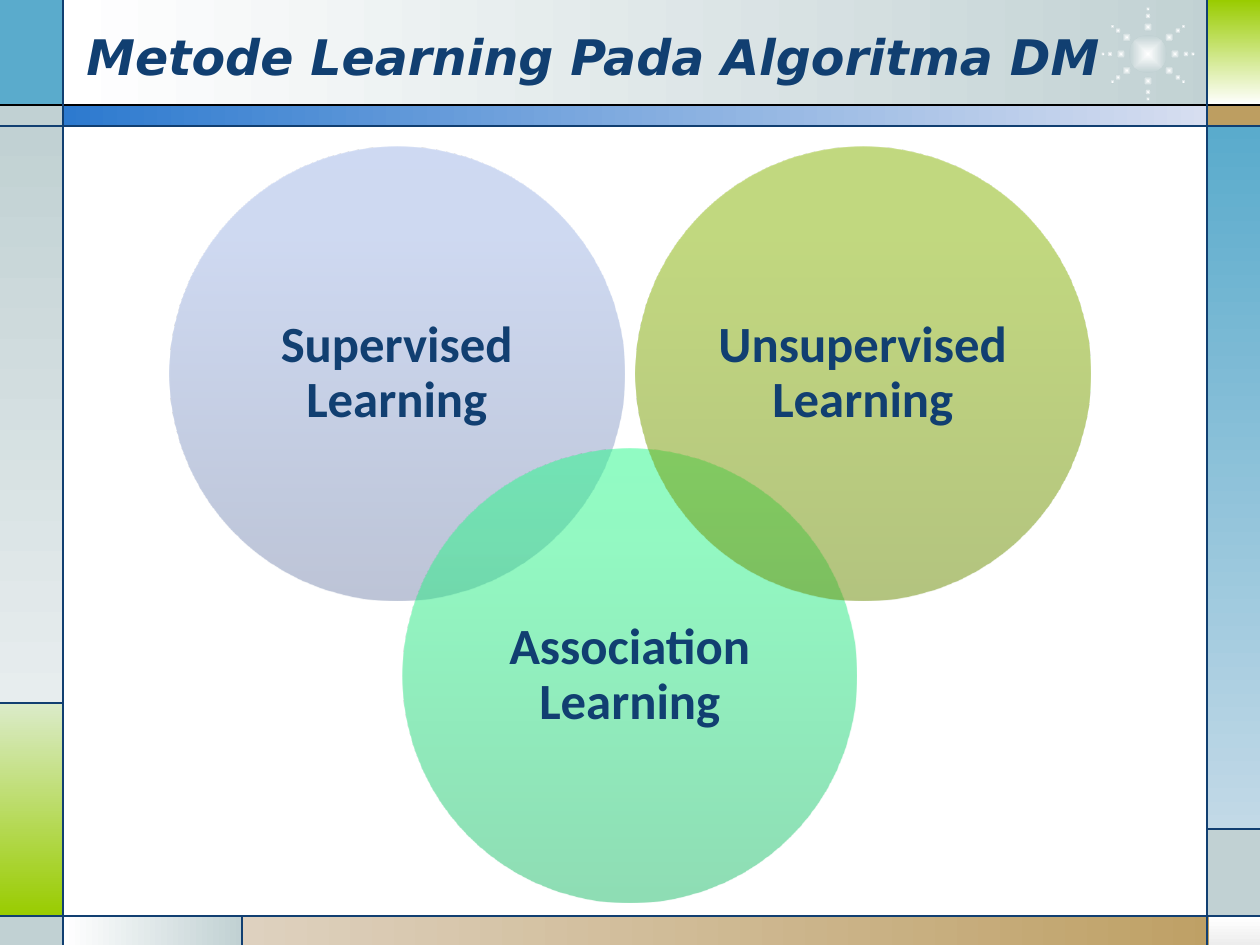
from math import cos, radians, sin

from lxml import etree
from pptx import Presentation
from pptx.dml.color import RGBColor
from pptx.enum.shapes import MSO_CONNECTOR as Connector, MSO_SHAPE as Shape
from pptx.enum.text import MSO_ANCHOR as Anchor, PP_ALIGN as Align
from pptx.oxml.ns import qn
from pptx.util import Pt

EMU_PER_PX = 914400 / 126

WHITE = RGBColor(0xFF, 0xFF, 0xFF)
BLACK = RGBColor(0x00, 0x00, 0x00)
NAVY = RGBColor(0x11, 0x3F, 0x71)
GREY = RGBColor(0xC1, 0xD1, 0xD3)
PALE_GREY = RGBColor(0xE7, 0xED, 0xEE)
SILVER = RGBColor(0xED, 0xED, 0xED)
SKY = RGBColor(0x5A, 0xAB, 0xCC)
PALE_SKY = RGBColor(0xC2, 0xD9, 0xE7)
LIME = RGBColor(0x99, 0xCC, 0x00)
PALE_LIME = RGBColor(0xDB, 0xEB, 0xC9)
TAN = RGBColor(0xBD, 0x9E, 0x61)
PALE_TAN = RGBColor(0xDE, 0xD1, 0xBF)
BLUE = RGBColor(0x2D, 0x7A, 0xCF)
PALE_BLUE = RGBColor(0xD7, 0xDE, 0xF0)
PERIWINKLE = (RGBColor(0x7B, 0x8B, 0xB0), RGBColor(0xA0, 0xB5, 0xE5), RGBColor(0x9F, 0xB5, 0xE7))
MINT = (RGBColor(0x1E, 0xBC, 0x69), RGBColor(0x27, 0xF5, 0x88), RGBColor(0x23, 0xFA, 0x89))
OLIVE = (RGBColor(0x67, 0x8A, 0x00), RGBColor(0x86, 0xB3, 0x00), RGBColor(0x86, 0xB4, 0x00))

ACROSS, DOWN, UP = 0, 90, 270


def emu(px):
    return round(px * EMU_PER_PX)


class SlideBuilder:
    title_font = "DejaVu Sans"
    label_font = "Calibri"

    def __init__(self, slide):
        self.slide = slide

    def shape(self, kind, left, top, width, height):
        shape = self.slide.shapes.add_shape(kind, emu(left), emu(top), emu(width), emu(height))
        shape.shadow.inherit = False
        shape.line.fill.background()
        return shape

    def gradient(self, shape, stops, angle=None, alpha=100):
        shape.fill.background()
        gradient = etree.Element(qn("a:gradFill"), rotWithShape="1")
        stop_list = etree.SubElement(gradient, qn("a:gsLst"))
        for position, color in stops:
            stop = etree.SubElement(stop_list, qn("a:gs"), pos=str(position * 1000))
            tint = etree.SubElement(stop, qn("a:srgbClr"), val=str(color))
            if alpha < 100:
                etree.SubElement(tint, qn("a:alpha"), val=str(alpha * 1000))
        if angle is None:
            radial = etree.SubElement(gradient, qn("a:path"), path="shape")
            center = {side: "50000" for side in "ltrb"}
            etree.SubElement(radial, qn("a:fillToRect"), **center)
        else:
            etree.SubElement(gradient, qn("a:lin"), ang=str(angle * 60000), scaled="0")
        properties = shape._element.spPr
        properties.replace(properties.find(qn("a:noFill")), gradient)

    def panel(self, left, top, right, bottom, start, end=None, angle=DOWN):
        panel = self.shape(Shape.RECTANGLE, left, top, right - left, bottom - top)
        if end is None:
            panel.fill.solid()
            panel.fill.fore_color.rgb = start
        else:
            self.gradient(panel, [(0, start), (100, end)], angle)

    def dot(self, center_x, center_y, size):
        dot = self.shape(Shape.OVAL, center_x - size / 2, center_y - size / 2, size, size)
        self.gradient(dot, [(0, WHITE), (100, GREY)])

    def starburst(self, center_x, center_y):
        self.dot(center_x, center_y, 38)
        for angle in (0, 38, 90, 142, 180, 218, 270, 322):
            for radius, size in ((27, 9), (38, 6), (45, 4)):
                self.dot(center_x + radius * cos(radians(angle)),
                         center_y + radius * sin(radians(angle)), size)

    def rule(self, start_x, start_y, end_x, end_y, color=NAVY):
        rule = self.slide.shapes.add_connector(
            Connector.STRAIGHT, emu(start_x), emu(start_y), emu(end_x), emu(end_y))
        rule.line.color.rgb = color
        rule.line.width = Pt(0.75)
        etree.SubElement(rule._element.spPr, qn("a:effectLst"))

    def set_text(self, frame, text, font, size, italic=False):
        frame.word_wrap = True
        frame.vertical_anchor = Anchor.MIDDLE
        para = frame.paragraphs[0]
        para.text = text
        span = para.runs[0]
        span.font.name = font
        span.font.size = Pt(size)
        span.font.bold = True
        span.font.italic = italic
        span.font.color.rgb = NAVY
        return para

    def title(self, left, top, width, height, text):
        box = self.slide.shapes.add_textbox(emu(left), emu(top), emu(width), emu(height))
        self.set_text(box.text_frame, text, self.title_font, 28, italic=True)

    def circle(self, left, top, size, colors, text):
        circle = self.shape(Shape.OVAL, left, top, size, size)
        self.gradient(circle, zip((0, 80, 100), colors), UP, alpha=50)
        frame = circle.text_frame
        frame.margin_left = frame.margin_right = emu(12)
        para = self.set_text(frame, text, self.label_font, 29)
        para.alignment = Align.CENTER
        para.line_spacing = 0.9


def main():
    deck = Presentation()
    deck.slide_width, deck.slide_height = emu(1260), emu(945)
    page = SlideBuilder(deck.slides.add_slide(deck.slide_layouts[6]))

    for panel in (
        (63, 0, 1231, 105, WHITE, GREY, ACROSS),
        (0, 0, 63, 105, SKY),
        (0, 105, 63, 126, GREY),
        (0, 126, 63, 703, GREY, PALE_GREY),
        (0, 703, 63, 916, PALE_LIME, LIME),
        (0, 916, 63, 945, GREY),
        (63, 916, 242, 945, WHITE, GREY, ACROSS),
        (242, 916, 1260, 945, PALE_TAN, TAN, ACROSS),
        (1209, 916, 1260, 945, WHITE, SILVER),
        (1207, 829, 1260, 916, GREY),
        (1207, 126, 1260, 829, SKY, PALE_SKY),
        (1207, 105, 1260, 126, TAN),
        (1208, 0, 1260, 105, LIME, WHITE),
        (63, 105, 1208, 126, BLUE, PALE_BLUE, ACROSS),
    ):
        page.panel(*panel)

    page.starburst(1148, 54)

    page.rule(0, 105, 1260, 105, BLACK)
    for y in (126, 916):
        page.rule(0, y, 1260, y)
    for x in (63, 1207):
        page.rule(x, 0, x, 945)
    page.rule(63, 703, 0, 703)
    page.rule(242, 916, 242, 945)
    page.rule(1207, 829, 1260, 829)

    page.title(74, 16, 1069, 79, "Metode Learning Pada Algoritma DM")
    page.circle(170, 147, 454, PERIWINKLE, "Supervised Learning")
    page.circle(403, 449, 454, MINT, "Association Learning")
    page.circle(636, 147, 454, OLIVE, "Unsupervised Learning")

    deck.save("out.pptx")


if __name__ == "__main__":
    main()
